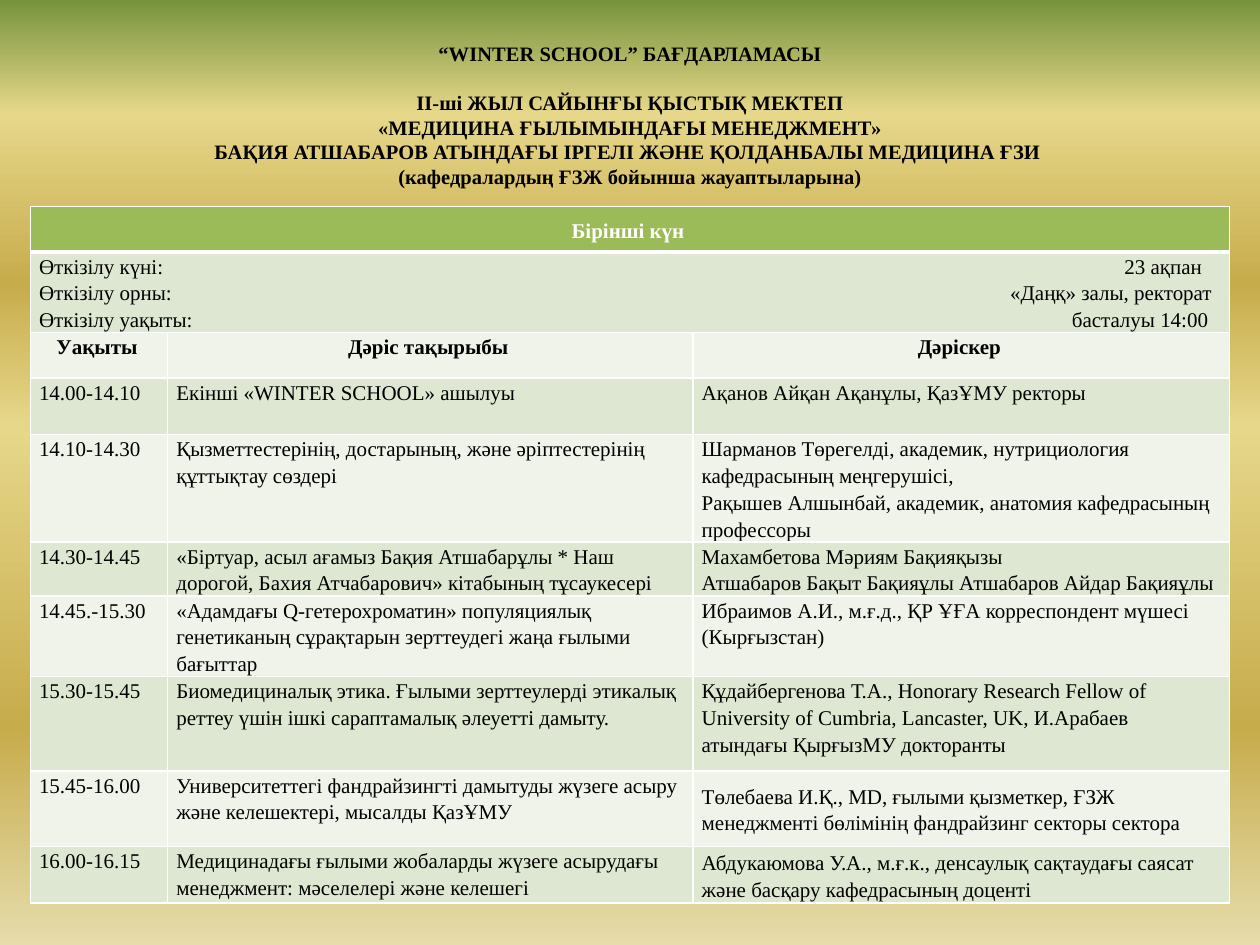
import copy
from dataclasses import dataclass

import pptx
import pptx.dml.color
import pptx.enum.text
import pptx.oxml
import pptx.oxml.ns
import pptx.util
from lxml import etree

Inches, Pt = pptx.util.Inches, pptx.util.Pt
ALIGN, ANCHOR = pptx.enum.text.PP_ALIGN, pptx.enum.text.MSO_ANCHOR
qn = pptx.oxml.ns.qn


@dataclass(frozen=True)
class Theme:
    font: str = "Times New Roman"
    size: float = 12
    title_size: float = 11.7
    title_gap: float = 14
    line_height: float = 15.3
    text: str = "000000"
    header_text: str = "FFFFFF"
    header: str = "9BBB59"
    bands: tuple = ("EFF3EA", "DEE7D1")
    border: str = "FFFFFF"
    thin: float = 1
    thick: float = 3
    background: tuple = ((0, "77933C"), (0.12, "E6D78A"), (0.30, "C7AC4C"),
                         (0.45, "E6D78A"), (0.77, "C7AC4C"), (1, "E6DCAC"))


THEME = Theme()
COLUMNS = (1.09, 4.17, 4.26)
ROWS = (0.36, 0.64, 0.36, 0.45, 0.85, 0.43, 0.63, 0.75, 0.6, 0.45)
MARGIN_LEFT, MARGIN_RIGHT = 0.07, 0.1
TITLE = (
    "“WINTER SCHOOL” БАҒДАРЛАМАСЫ",
    "II-ші ЖЫЛ САЙЫНҒЫ ҚЫСТЫҚ МЕКТЕП",
    "«МЕДИЦИНА ҒЫЛЫМЫНДАҒЫ МЕНЕДЖМЕНТ»",
    "БАҚИЯ АТШАБАРОВ АТЫНДАҒЫ ІРГЕЛІ ЖӘНЕ ҚОЛДАНБАЛЫ МЕДИЦИНА ҒЗИ ",
    "(кафедралардың ҒЗЖ бойынша жауаптыларына)",
)
DAY = "Бірінші күн"
DETAILS = (
    ("Өткізілу күні:\t23 ақпан", 9.23),
    ("Өткізілу орны:\t«Даңқ» залы, ректорат", 9.31),
    ("Өткізілу уақыты:\tбасталуы 14:00", 9.28),
)
HEADINGS = ("Уақыты", "Дәріс тақырыбы", "Дәріскер")
LECTURES = (
    ("14.00-14.10", "Екінші «WINTER SCHOOL» ашылуы",
     "Ақанов Айқан Ақанұлы, ҚазҰМУ ректоры"),
    ("14.10-14.30",
     "Қызметтестерінің, достарының, және әріптестерінің құттықтау сөздері",
     "Шарманов Төрегелді, академик, нутрициология кафедрасының меңгерушісі,\n"
     "Рақышев Алшынбай, академик, анатомия кафедрасының профессоры"),
    ("14.30-14.45",
     "«Біртуар, асыл ағамыз Бақия Атшабарұлы * Наш дорогой, Бахия Атчабарович» "
     "кітабының тұсаукесері",
     "Махамбетова Мәриям Бақияқызы\n"
     "Атшабаров Бақыт Бақияұлы Атшабаров Айдар Бақияұлы"),
    ("14.45.-15.30",
     "«Адамдағы Q-гетерохроматин» популяциялық генетиканың сұрақтарын "
     "зерттеудегі жаңа ғылыми бағыттар",
     "Ибраимов А.И., м.ғ.д., ҚР ҰҒА корреспондент мүшесі (Кырғызстан)"),
    ("15.30-15.45",
     "Биомедициналық этика. Ғылыми зерттеулерді этикалық реттеу үшін ішкі "
     "сараптамалық әлеуетті дамыту.",
     "Құдайбергенова Т.А., Honorary Research Fellow of University of Cumbria, "
     "Lancaster, UK, И.Арабаев атындағы ҚырғызМУ докторанты"),
    ("15.45-16.00",
     "Университеттегі фандрайзингті дамытуды жүзеге асыру және келешектері, "
     "мысалды ҚазҰМУ",
     "Төлебаева И.Қ., MD, ғылыми қызметкер, ҒЗЖ менеджменті бөлімінің "
     "фандрайзинг секторы сектора"),
    ("16.00-16.15",
     "Медицинадағы ғылыми жобаларды жүзеге асырудағы менеджмент: мәселелері "
     "және келешегі",
     "Абдукаюмова У.А., м.ғ.к., денсаулық сақтаудағы саясат және басқару "
     "кафедрасының доценті"),
)


def rgb(value):
    return pptx.dml.color.RGBColor.from_string(value)


def write(tf, text, color=THEME.text, bold=False, align=ALIGN.LEFT,
          size=THEME.size, line_height=Pt(THEME.line_height)):
    tf.text = text
    for p in tf.paragraphs:
        p.alignment = align
        p.line_spacing = line_height
        for r in p.runs:
            r.font.name = THEME.font
            r.font.size = Pt(size)
            r.font.bold = bold
            r.font.color.rgb = rgb(color)


def paint_background(s):
    fill = s.background.fill
    fill.gradient()
    fill.gradient_angle = 270
    stops = s._element.find(".//" + qn("a:gsLst"))
    for _ in range(len(THEME.background) - len(stops)):
        stops.append(copy.deepcopy(stops[0]))
    for stop, (position, color) in zip(fill.gradient_stops, THEME.background):
        stop.position = position
        stop.color.rgb = rgb(color)


def add_title(prs, s):
    w, h = prs.slide_width, prs.slide_height
    sp = s.shapes.add_textbox(int(w * 0.05), int(h * 0.03), int(w * 0.9), int(h * 0.25))
    tf = sp.text_frame
    tf.word_wrap = True
    tf.vertical_anchor = ANCHOR.TOP
    tf.margin_top = Inches(0.1)
    write(tf, "\n".join(TITLE), bold=True, align=ALIGN.CENTER,
          size=THEME.title_size, line_height=None)
    tf.paragraphs[0].space_after = Pt(THEME.title_gap)


def set_borders(cell, **widths):
    """Draw all four borders thin, except the sides given in widths."""
    tc_pr = cell._tc.get_or_add_tcPr()
    for side in "LRTB":
        width = Pt(widths.get(side, THEME.thin))
        ln = etree.SubElement(tc_pr, qn("a:ln" + side), w=str(width))
        fill = etree.SubElement(ln, qn("a:solidFill"))
        etree.SubElement(fill, qn("a:srgbClr"), val=THEME.border)


def style_cell(cell, color, **widths):
    set_borders(cell, **widths)
    cell.fill.solid()
    cell.fill.fore_color.rgb = rgb(color)
    cell.margin_left, cell.margin_right = Inches(MARGIN_LEFT), Inches(MARGIN_RIGHT)
    cell.margin_top = cell.margin_bottom = 0


def add_right_tab(p, position):
    p_pr = p._p.get_or_add_pPr()
    tabs = etree.SubElement(p_pr, qn("a:tabLst"))
    etree.SubElement(tabs, qn("a:tab"), pos=str(Inches(position)), algn="r")


def add_programme(s):
    frame = s.shapes.add_table(len(ROWS), len(COLUMNS), Inches(0.24), Inches(1.64),
                               Inches(sum(COLUMNS)), Inches(sum(ROWS)))
    table = frame.table
    for column, width in zip(table.columns, COLUMNS):
        column.width = Inches(width)
    for i, (row, height) in enumerate(zip(table.rows, ROWS)):
        row.height = Inches(height)
        for cell in row.cells:
            if i == 0:
                style_cell(cell, THEME.header, B=THEME.thick)
            else:
                style_cell(cell, THEME.bands[i % 2], T=THEME.thick if i == 1 else THEME.thin)
    for i in range(2):
        table.cell(i, 0).merge(table.cell(i, len(COLUMNS) - 1))

    day, details = table.cell(0, 0), table.cell(1, 0)
    day.vertical_anchor = ANCHOR.MIDDLE
    write(day.text_frame, DAY, THEME.header_text, True, ALIGN.CENTER)
    write(details.text_frame, "\n".join(text for text, _ in DETAILS))
    for p, (_, tab) in zip(details.text_frame.paragraphs, DETAILS):
        add_right_tab(p, tab)

    for i, texts in enumerate((HEADINGS,) + LECTURES, start=2):
        heading = texts is HEADINGS
        for j, text in enumerate(texts):
            write(table.cell(i, j).text_frame, text, bold=heading,
                  align=ALIGN.CENTER if heading else ALIGN.LEFT)
    for i in (-2, -1):
        table.cell(len(ROWS) + i, 2).vertical_anchor = ANCHOR.MIDDLE


def main():
    prs = pptx.Presentation()
    prs.slide_width, prs.slide_height = Inches(10), Inches(7.5)
    s = prs.slides.add_slide(prs.slide_layouts[6])
    paint_background(s)
    add_title(prs, s)
    add_programme(s)
    prs.save("out.pptx")


if __name__ == "__main__":
    main()
